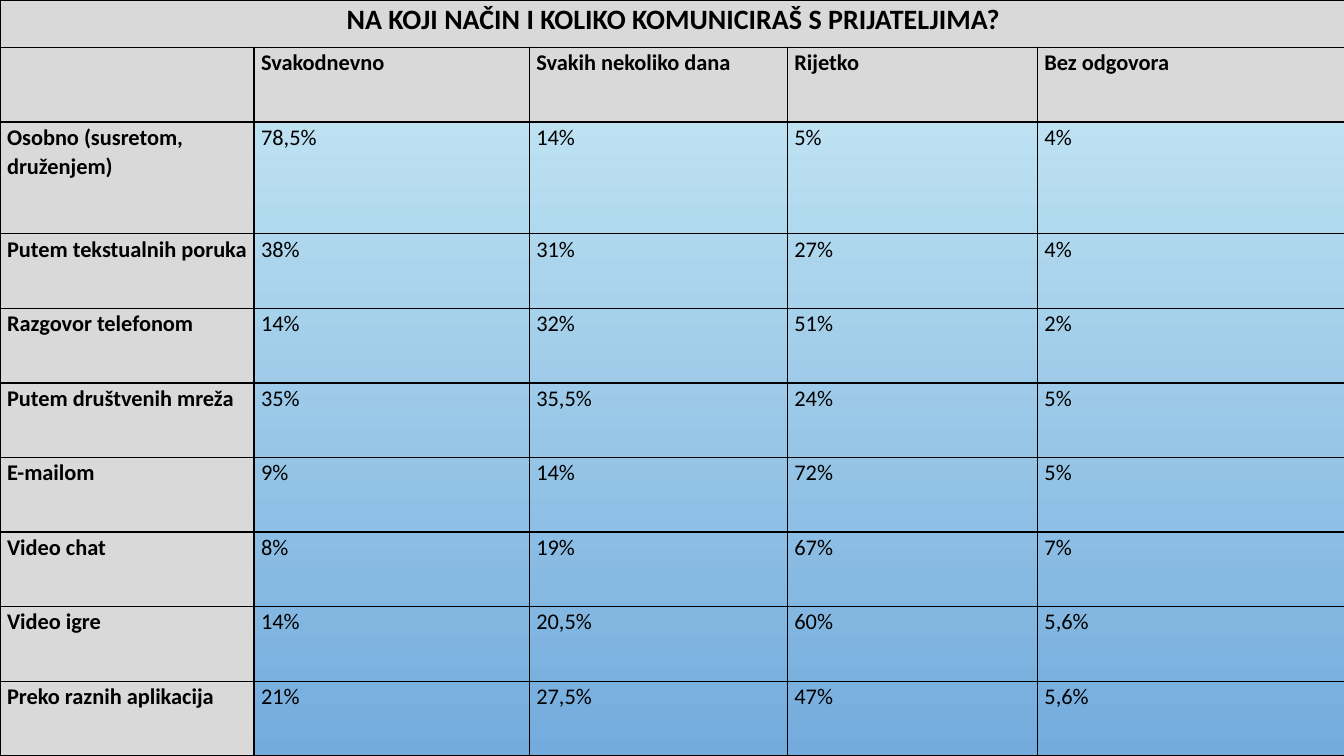
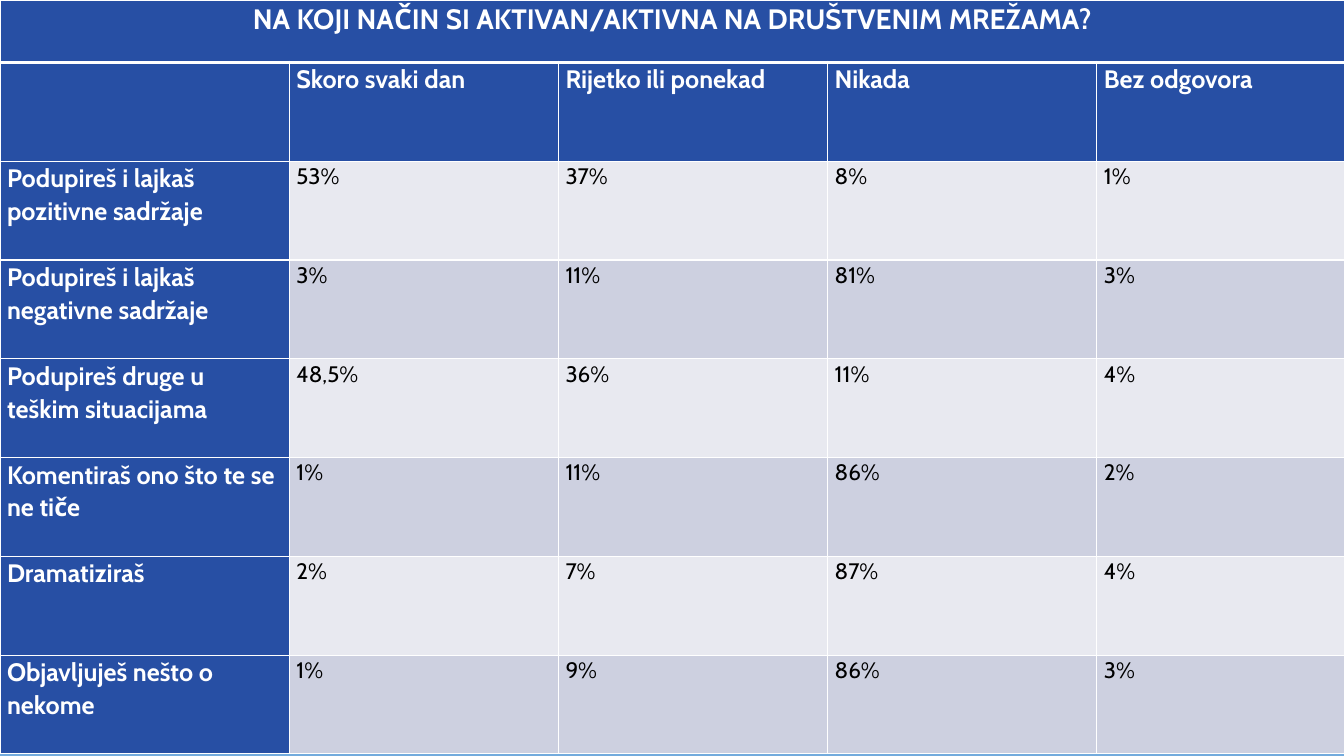
from dataclasses import dataclass

from lxml import etree
from pptx import Presentation
from pptx.dml.color import RGBColor
from pptx.enum.text import PP_ALIGN
from pptx.oxml.ns import qn
from pptx.presentation import Presentation as Deck
from pptx.table import _Cell
from pptx.util import Inches, Pt

CENTER, LEFT = PP_ALIGN.CENTER, PP_ALIGN.LEFT

BLACK = RGBColor(0x00, 0x00, 0x00)
WHITE = RGBColor(0xFF, 0xFF, 0xFF)
GREY = RGBColor(0xD9, 0xD9, 0xD9)
BLUE = RGBColor(0x27, 0x4F, 0xA4)
PALE = RGBColor(0xE8, 0xE9, 0xF0)
LAVENDER = RGBColor(0xCD, 0xD0, 0xE0)
SKY_TOP = RGBColor(0xCB, 0xEC, 0xF5)
SKY_BOTTOM = RGBColor(0x73, 0xAB, 0xDD)

BLANK_LAYOUT = 6
TITLE_SIZE = 20
VALUE_SIZE = 16
LINE_SPACING = 1.07
SIDE_MARGIN = Inches(0.07)
BORDER = 1


@dataclass(frozen=True)
class TableStyle:
    font: str
    label_size: int
    label_color: RGBColor
    label_fill: RGBColor
    value_fills: tuple[RGBColor | None, ...]  # taken in turn; None is see-through
    border_color: RGBColor
    title_rule: float


@dataclass(frozen=True)
class Survey:
    question: str
    answers: list[str]
    rows: list[list[str]]
    widths: list[float]
    heights: list[float]
    style: TableStyle


GREY_STYLE = TableStyle("Calibri", 16, BLACK, GREY, (None,), BLACK, BORDER)
BLUE_STYLE = TableStyle("Cabin", 18, WHITE, BLUE, (PALE, LAVENDER), WHITE, 3)

SURVEYS = [
    Survey(
        "NA KOJI NAČIN I KOLIKO KOMUNICIRAŠ S PRIJATELJIMA?",
        ["Svakodnevno", "Svakih nekoliko dana", "Rijetko", "Bez odgovora"],
        [
            ["Osobno (susretom, druženjem)", "78,5%", "14%", "5%", "4%"],
            ["Putem tekstualnih poruka", "38%", "31%", "27%", "4%"],
            ["Razgovor telefonom", "14%", "32%", "51%", "2%"],
            ["Putem društvenih mreža", "35%", "35,5%", "24%", "5%"],
            ["E-mailom", "9%", "14%", "72%", "5%"],
            ["Video chat", "8%", "19%", "67%", "7%"],
            ["Video igre", "14%", "20,5%", "60%", "5,6%"],
            ["Preko raznih aplikacija", "21%", "27,5%", "47%", "5,6%"],
        ],
        [2.52, 2.73, 2.56, 2.48, 3.07],
        [0.47, 0.74, 1.11] + [0.74] * 7,
        GREY_STYLE,
    ),
    Survey(
        "NA KOJI NAČIN SI AKTIVAN/AKTIVNA NA DRUŠTVENIM MREŽAMA?",
        ["Skoro svaki dan", "Rijetko ili ponekad", "Nikada", "Bez odgovora"],
        [
            ["Podupireš i lajkaš pozitivne sadržaje", "53%", "37%", "8%", "1%"],
            ["Podupireš i lajkaš negativne sadržaje", "3%", "11%", "81%", "3%"],
            ["Podupireš druge u teškim situacijama", "48,5%", "36%", "11%", "4%"],
            ["Komentiraš ono što te se ne tiče", "1%", "11%", "86%", "2%"],
            ["Dramatiziraš", "2%", "7%", "87%", "4%"],
            ["Objavljuješ nešto o nekome", "1%", "9%", "86%", "3%"],
        ],
        [2.87, 2.67, 2.67, 2.67, 2.46],
        [0.62] + [0.98] * 7,
        BLUE_STYLE,
    ),
]


def paint_background(deck: Deck) -> None:
    """Give every slide the sky gradient through the master."""
    fill = deck.slide_master.background.fill
    fill.gradient()
    fill.gradient_angle = 270
    for stop, color in zip(fill.gradient_stops, (SKY_TOP, SKY_BOTTOM)):
        stop.color.rgb = color


def draw_borders(cell: _Cell, color: RGBColor, top: float, bottom: float) -> None:
    """Draw the four cell edges; call before the fill, which must follow them."""
    properties = cell._tc.get_or_add_tcPr()
    edges = {"a:lnL": BORDER, "a:lnR": BORDER, "a:lnT": top, "a:lnB": bottom}
    for tag, width in edges.items():
        line = etree.SubElement(properties, qn(tag), w=str(Pt(width)))
        solid = etree.SubElement(line, qn("a:solidFill"))
        etree.SubElement(solid, qn("a:srgbClr"), val=str(color))


def fill_cell(cell: _Cell, color: RGBColor | None) -> None:
    if color is None:
        cell.fill.background()
    else:
        cell.fill.solid()
        cell.fill.fore_color.rgb = color


def write_cell(cell: _Cell, text: str, row: int, is_label: bool, style: TableStyle) -> None:
    cell.margin_left = cell.margin_right = SIDE_MARGIN
    cell.margin_top = cell.margin_bottom = 0
    if not text:
        return
    cell.text = text
    para = cell.text_frame.paragraphs[0]
    para.alignment = CENTER if row == 0 else LEFT
    para.line_spacing = LINE_SPACING
    label_size = TITLE_SIZE if row == 0 else style.label_size
    para.font.name = style.font
    para.font.size = Pt(label_size if is_label else VALUE_SIZE)
    para.font.bold = is_label
    para.font.color.rgb = style.label_color if is_label else BLACK


def add_survey(deck: Deck, survey: Survey) -> None:
    page = deck.slides.add_slide(deck.slide_layouts[BLANK_LAYOUT])
    style = survey.style
    title_row = [survey.question] + [""] * len(survey.answers)
    grid = [title_row, ["", *survey.answers], *survey.rows]
    table = page.shapes.add_table(
        len(grid), len(survey.widths), 0, 0,
        Inches(sum(survey.widths)), Inches(sum(survey.heights)),
    ).table
    table.first_row = table.horz_banding = False
    for column, width in zip(table.columns, survey.widths):
        column.width = Inches(width)
    for table_row, height in zip(table.rows, survey.heights):
        table_row.height = Inches(height)
    table.cell(0, 0).merge(table.cell(0, len(survey.answers)))

    for row, texts in enumerate(grid):
        top = style.title_rule if row == 1 else BORDER
        bottom = style.title_rule if row == 0 else BORDER
        value_fill = style.value_fills[row % len(style.value_fills)]
        for column, text in enumerate(texts):
            cell = table.cell(row, column)
            is_label = row < 2 or column == 0
            draw_borders(cell, style.border_color, top, bottom)
            fill_cell(cell, style.label_fill if is_label else value_fill)
            write_cell(cell, text, row, is_label, style)


def main() -> None:
    deck = Presentation()
    deck.slide_width, deck.slide_height = Inches(13.33), Inches(7.5)
    paint_background(deck)
    for survey in SURVEYS:
        add_survey(deck, survey)
    deck.save("out.pptx")


if __name__ == "__main__":
    main()
